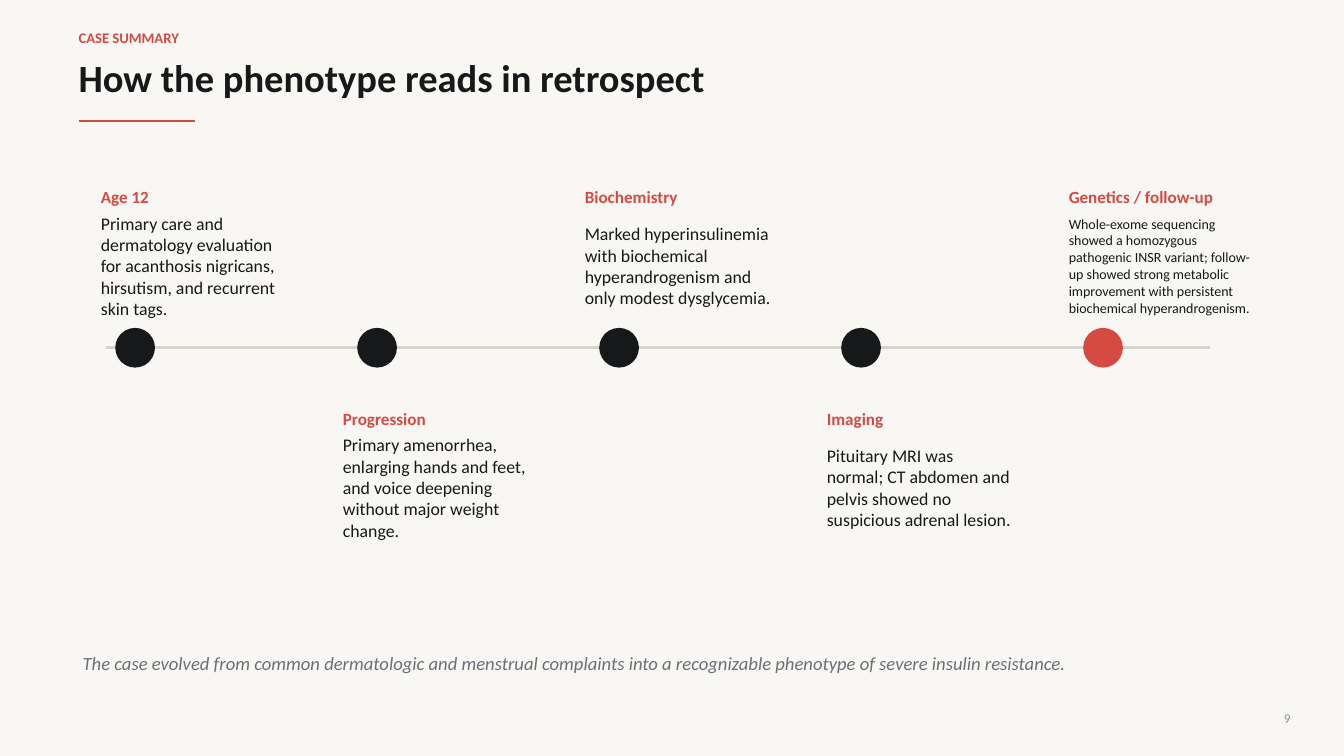
import pptx
import pptx.util
import pptx.dml.color
import pptx.enum.shapes
import pptx.enum.text
import pptx.oxml.ns
import lxml.etree

Inches = pptx.util.Inches
Align = pptx.enum.text.PP_ALIGN

COLORS = {
    "paper": "F8F7F4",
    "ink": "16181A",
    "accent": "D54A42",
    "axis": "D9D3CD",
    "takeaway": "6A7078",
    "page": "8F969F",
}
FONT = "Calibri"

# Grid in inches: one column per stage, one row above and one below the axis
MARGIN = 0.78
FIRST_COLUMN, COLUMN_STEP = 1.0, 2.4
ROW_TOPS = (1.85, 4.05)
AXIS_Y = 3.45
DOT_SIZE, DOT_INDENT = 0.38, 0.15

# Heading, description, description size
STAGES = [
    ("Age 12", "Primary care and dermatology evaluation for acanthosis nigricans, "
     "hirsutism, and recurrent skin tags.", 12.7),
    ("Progression", "Primary amenorrhea, enlarging hands and feet, and voice "
     "deepening without major weight change.", 12.7),
    ("Biochemistry", "Marked hyperinsulinemia with biochemical hyperandrogenism "
     "and only modest dysglycemia.", 12.7),
    ("Imaging", "Pituitary MRI was normal; CT abdomen and pelvis showed no "
     "suspicious adrenal lesion.", 12.7),
    ("Genetics / follow-up", "Whole-exome sequencing showed a homozygous pathogenic "
     "INSR variant; follow-up showed strong metabolic improvement with persistent "
     "biochemical hyperandrogenism.", 10),
]


def rgb(name):
    return pptx.dml.color.RGBColor.from_string(COLORS[name])


def add_text(slide, text, left, top, width, height, size, color,
             bold=False, italic=False, align=Align.LEFT):
    box = slide.shapes.add_textbox(*map(Inches, (left, top, width, height)))
    frame = box.text_frame
    frame.word_wrap = True
    frame.vertical_anchor = pptx.enum.text.MSO_ANCHOR.MIDDLE
    frame.margin_left = frame.margin_right = 0
    frame.margin_top = frame.margin_bottom = 0
    paragraph = frame.paragraphs[0]
    paragraph.alignment = align
    run = paragraph.add_run()
    run.text = text
    run.font.name = FONT
    run.font.size = pptx.util.Pt(size)
    run.font.bold = bold
    run.font.italic = italic
    run.font.color.rgb = rgb(color)


def add_rule(slide, left, right, y, color, weight):
    rule = slide.shapes.add_connector(
        pptx.enum.shapes.MSO_CONNECTOR.STRAIGHT,
        Inches(left), Inches(y), Inches(right), Inches(y))
    rule.line.color.rgb = rgb(color)
    rule.line.width = pptx.util.Pt(weight)
    lxml.etree.SubElement(rule._element.spPr, pptx.oxml.ns.qn("a:effectLst"))


def add_dot(slide, left, color):
    dot = slide.shapes.add_shape(
        pptx.enum.shapes.MSO_SHAPE.OVAL, Inches(left),
        Inches(AXIS_Y - DOT_SIZE / 2), Inches(DOT_SIZE), Inches(DOT_SIZE))
    dot.shadow.inherit = False
    dot.fill.solid()
    dot.fill.fore_color.rgb = rgb(color)
    dot.line.color.rgb = rgb(color)
    dot.line.width = pptx.util.Pt(1)


def add_stage(slide, index, heading, description, size):
    left = FIRST_COLUMN + index * COLUMN_STEP
    top = ROW_TOPS[index % 2]
    is_last = index == len(STAGES) - 1
    add_dot(slide, left + DOT_INDENT, "accent" if is_last else "ink")
    add_text(slide, heading, left, top, 1.55, 0.2, 12.2, "accent", bold=True)
    add_text(slide, description, left, top + 0.26, 1.85, 1.05, size, "ink")


def main():
    deck = pptx.Presentation()
    deck.slide_width, deck.slide_height = Inches(13.33), Inches(7.5)
    slide = deck.slides.add_slide(deck.slide_layouts[6])
    slide.background.fill.solid()
    slide.background.fill.fore_color.rgb = rgb("paper")

    # Header
    add_text(slide, "CASE SUMMARY", MARGIN, 0.28, 3.2, 0.18, 10.5, "accent", bold=True)
    add_rule(slide, MARGIN, MARGIN + 1.15, 1.2, "accent", 1.6)
    add_text(slide, "How the phenotype reads in retrospect",
             MARGIN, 0.52, 8.2, 0.48, 27.5, "ink", bold=True)

    # Timeline
    add_rule(slide, 1.05, 12, AXIS_Y, "axis", 2)
    for index, stage in enumerate(STAGES):
        add_stage(slide, index, *stage)

    # Takeaway and page number
    add_text(slide, "The case evolved from common dermatologic and menstrual complaints "
             "into a recognizable phenotype of severe insulin resistance.",
             0.82, 6.45, 11.7, 0.25, 13.3, "takeaway", italic=True)
    add_text(slide, "9", 12.45, 7.03, 0.35, 0.18, 9.5, "page", align=Align.RIGHT)

    deck.save("out.pptx")


if __name__ == "__main__":
    main()
